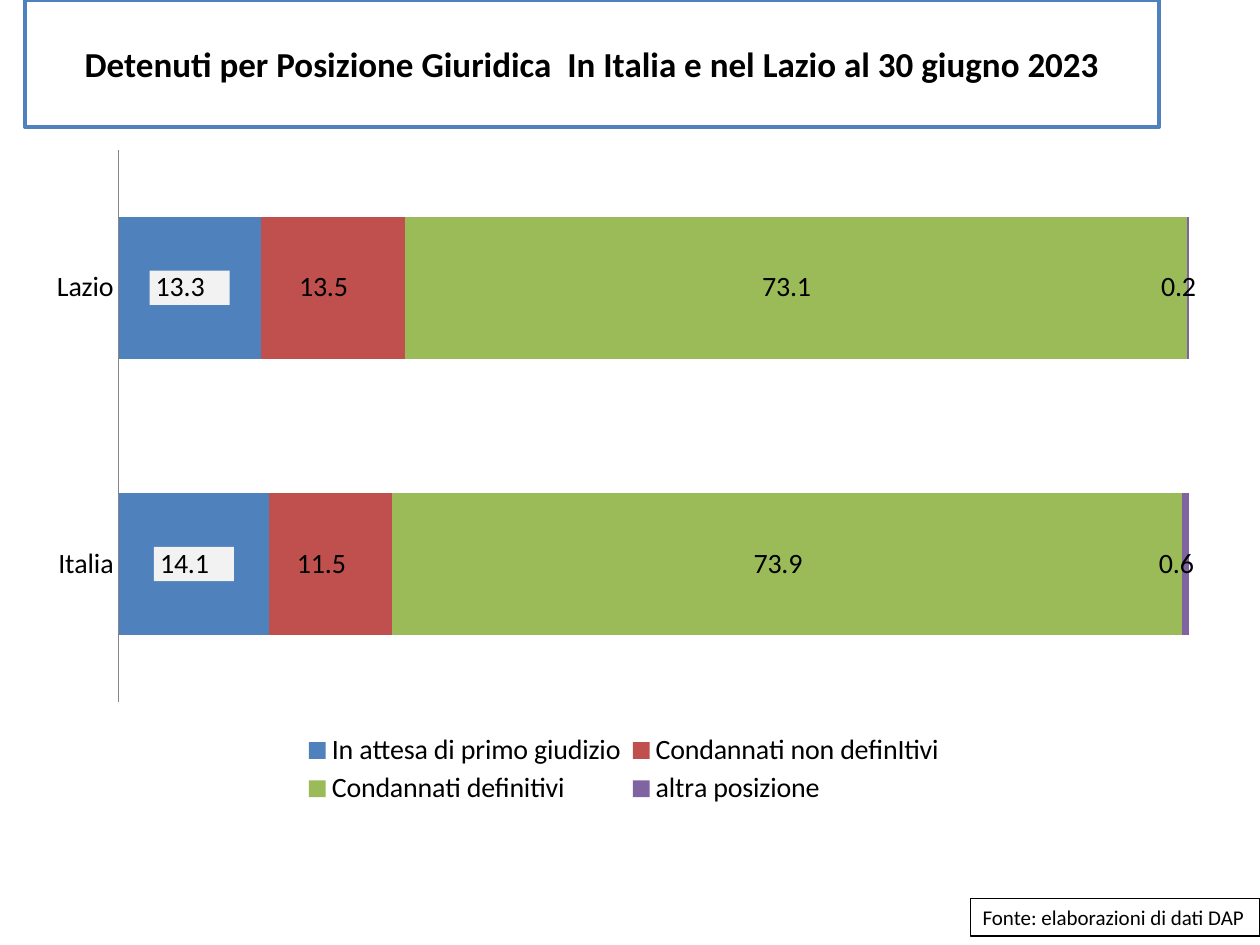
from dataclasses import dataclass

from lxml.etree import SubElement
from pptx import Presentation
from pptx.chart.data import CategoryChartData
from pptx.dml.color import RGBColor
from pptx.enum.chart import XL_CHART_TYPE, XL_LABEL_POSITION, XL_LEGEND_POSITION, XL_TICK_MARK
from pptx.enum.text import MSO_ANCHOR, PP_ALIGN
from pptx.oxml import parse_xml
from pptx.oxml.ns import nsdecls, qn
from pptx.util import Inches, Pt


@dataclass(frozen=True)
class Theme:
    font: str = "Calibri"
    text: str = "000000"
    background: str = "FFFFFF"
    accent: str = "4F81BD"
    axis: str = "868686"
    label_box: str = "F2F2F2"
    title_size: int = 20
    chart_size: int = 16
    source_size: int = 12


THEME = Theme()
NUMBER_FORMAT = r"_-* #,##0.0\ _€_-;\-* #,##0.0\ _€_-;_-* "
REGIONS = ["Lazio", "Italia"]
POSITIONS = [
    ("In attesa di primo giudizio", (13.3, 14.1), "4F81BD"),
    ("Condannati non definItivi", (13.5, 11.5), "C0504D"),
    ("Condannati definitivi", (73.1, 73.9), "9BBB59"),
    ("altra posizione", (0.2, 0.6), "8064A2"),
]


def color(value):
    return RGBColor.from_string(value)


def style_font(font, size, bold=False):
    font.name = THEME.font
    font.size = Pt(size)
    font.bold = bold
    font.color.rgb = color(THEME.text)


def style_box(shape, line_color, line_width):
    shape.fill.solid()
    shape.fill.fore_color.rgb = color(THEME.background)
    shape.line.color.rgb = color(line_color)
    shape.line.width = Pt(line_width)


def add_title(slide, text):
    title = slide.shapes.title
    title.left, title.top = Inches(0.2), Inches(0)
    title.width, title.height = Inches(9), Inches(1.01)
    style_box(title, THEME.accent, 2)
    title.text_frame.text = text
    title.text_frame.vertical_anchor = MSO_ANCHOR.MIDDLE
    paragraph = title.text_frame.paragraphs[0]
    paragraph.alignment = PP_ALIGN.CENTER
    style_font(paragraph.runs[0].font, THEME.title_size, bold=True)


def add_source(slide, text):
    box = slide.shapes.add_textbox(Inches(7.7), Inches(7.13), Inches(2.3), Inches(0.3))
    style_box(box, THEME.text, 0.75)
    box.text_frame.text = text
    box.text_frame.word_wrap = False
    style_font(box.text_frame.paragraphs[0].runs[0].font, THEME.source_size)


def set_layout(parent, index, bounds, inner=False):
    for existing in parent.findall(qn("c:layout")):
        parent.remove(existing)
    layout = parse_xml(f"<c:layout {nsdecls('c')}><c:manualLayout/></c:layout>")
    settings = [("layoutTarget", "inner")] if inner else []
    settings += [("xMode", "edge"), ("yMode", "edge"), *zip("xywh", bounds)]
    for name, value in settings:
        SubElement(layout[0], qn(f"c:{name}")).set("val", str(value))
    parent.insert(index, layout)


def add_labels(series):
    labels = series.data_labels
    labels.show_value = True
    labels.position = XL_LABEL_POSITION.CENTER
    labels.number_format = NUMBER_FORMAT
    labels.number_format_is_linked = False
    style_font(labels.font, THEME.chart_size)
    return labels


def fill_labels(labels, fill_color):
    fill = parse_xml(
        f"<c:spPr {nsdecls('c', 'a')}><a:solidFill>"
        f'<a:srgbClr val="{fill_color}"/></a:solidFill></c:spPr>'
    )
    labels._element.find(qn("c:numFmt")).addnext(fill)


def style_axes(chart):
    category_axis = chart.category_axis
    category_axis.reverse_order = True
    category_axis.major_tick_mark = XL_TICK_MARK.NONE
    category_axis.format.line.color.rgb = color(THEME.axis)
    category_axis.format.line.width = Pt(0.75)
    value_axis = chart.value_axis
    value_axis.visible = False
    value_axis.has_major_gridlines = False
    value_axis.tick_labels.number_format = NUMBER_FORMAT
    value_axis.tick_labels.number_format_is_linked = False


def add_legend(chart):
    chart.has_legend = True
    chart.legend.position = XL_LEGEND_POSITION.BOTTOM
    chart.legend.include_in_layout = False
    style_font(chart.legend.font, THEME.chart_size)
    set_layout(chart.legend._element, 1, (0.22, 0.88, 0.55, 0.12))


def add_positions_chart(slide):
    chart_data = CategoryChartData(number_format="0.0")
    chart_data.categories = REGIONS
    for name, values, _ in POSITIONS:
        chart_data.add_series(name, values)
    chart = slide.shapes.add_chart(
        XL_CHART_TYPE.BAR_STACKED_100,
        Inches(0.28), Inches(1.08), Inches(9.44), Inches(5.35), chart_data,
    ).chart
    chart.has_title = False
    style_font(chart.font, THEME.chart_size)
    plot = chart.plots[0]
    plot.gap_width = 95
    plot.overlap = 100
    plot.vary_by_categories = False
    for series, (_, _, fill_color) in zip(plot.series, POSITIONS):
        series.format.fill.solid()
        series.format.fill.fore_color.rgb = color(fill_color)
        add_labels(series)
    fill_labels(plot.series[0].data_labels, THEME.label_box)
    style_axes(chart)
    add_legend(chart)
    plot_area = chart._chartSpace.chart.plotArea
    set_layout(plot_area, 0, (0.07, 0.02, 0.9, 0.82), inner=True)


def main():
    presentation = Presentation()
    presentation.slide_width = Inches(10)
    presentation.slide_height = Inches(7.5)
    slide = presentation.slides.add_slide(presentation.slide_layouts[5])
    add_title(slide, "Detenuti per Posizione Giuridica  In Italia e nel Lazio al 30 giugno 2023")
    add_source(slide, "Fonte: elaborazioni di dati DAP")
    add_positions_chart(slide)
    presentation.save("out.pptx")


if __name__ == "__main__":
    main()
